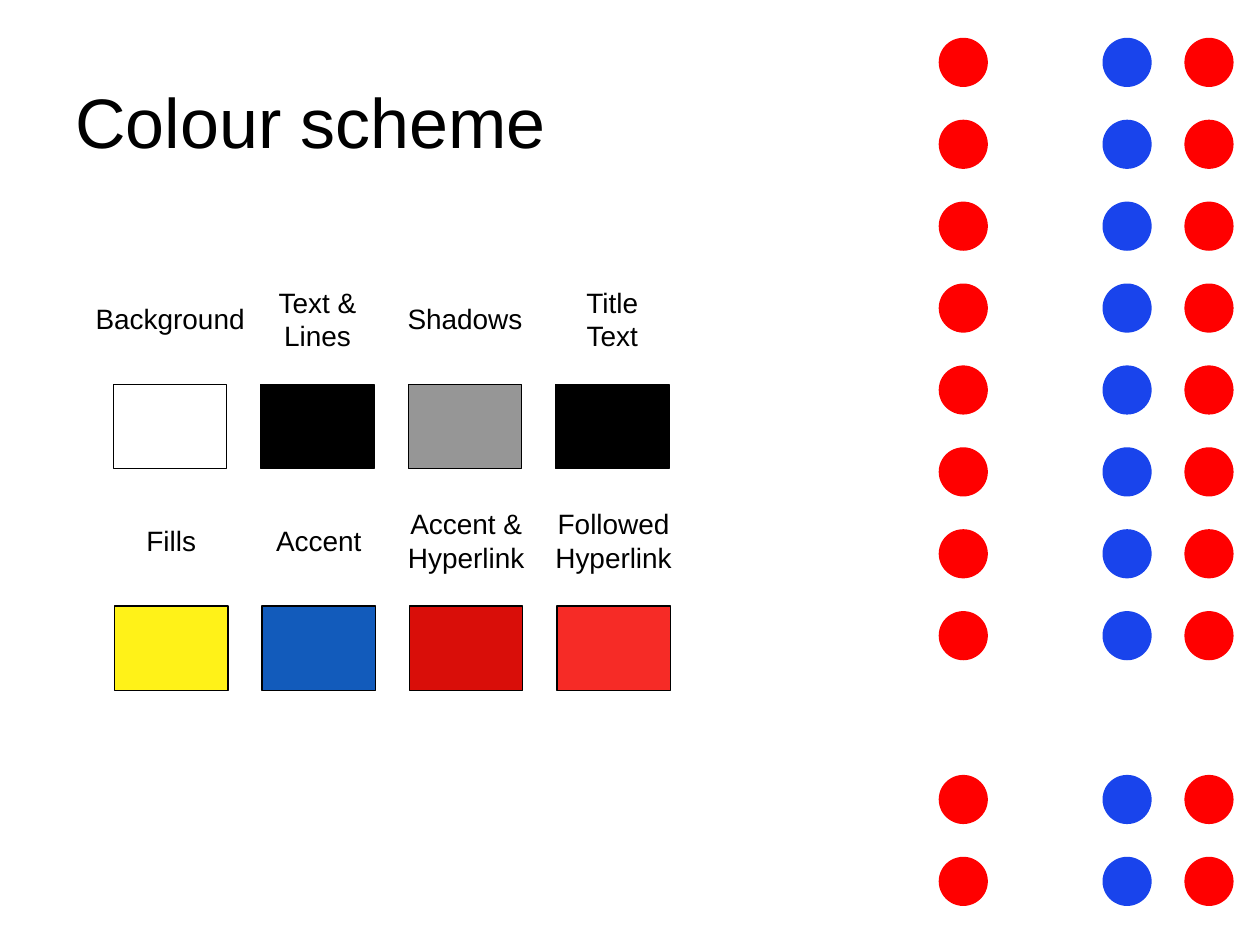
from dataclasses import dataclass

import pptx
import pptx.dml.color
import pptx.enum.shapes
import pptx.enum.text
import pptx.util

RGBColor = pptx.dml.color.RGBColor
Inches = pptx.util.Inches
Shape = pptx.enum.shapes.MSO_SHAPE
Align = pptx.enum.text.PP_ALIGN
AutoSize = pptx.enum.text.MSO_AUTO_SIZE

WHITE = RGBColor(0xFF, 0xFF, 0xFF)
BLACK = RGBColor(0x00, 0x00, 0x00)
GREY = RGBColor(0x96, 0x96, 0x96)
YELLOW = RGBColor(0xFF, 0xF2, 0x18)
BLUE = RGBColor(0x12, 0x5B, 0xBB)
DARK_RED = RGBColor(0xD9, 0x0E, 0x09)
LIGHT_RED = RGBColor(0xF6, 0x2B, 0x26)
DOT_RED = RGBColor(0xFF, 0x00, 0x00)
DOT_BLUE = RGBColor(0x19, 0x44, 0xEC)

# Dot grid: origin, pitch and diameter in inches
DOT_LEFT, DOT_TOP, DOT_PITCH, DOT_SIZE = 7.45, 0.3, 0.65, 0.39
DOT_COLUMNS = {0: DOT_RED, 2: DOT_BLUE, 3: DOT_RED}
DOT_ROWS = [row for row in range(11) if row != 8]

# Swatch grid: each row starts at its own left and top
SWATCH_ROWS = [(0.9, 3.05), (0.91, 4.81)]
SWATCH_PITCH, SWATCH_WIDTH, SWATCH_HEIGHT = 1.17, 0.9, 0.67
LABEL_RISE = 0.52  # from the swatch top up to the middle of its label
LINE_HEIGHT, LABEL_PADDING = 0.27, 0.1


@dataclass(frozen=True)
class Swatch:
    label: str
    label_width: float
    color: RGBColor
    column: int
    row: int


SWATCHES = [
    Swatch("Background", 1.39, WHITE, 0, 0),
    Swatch("Text &\nLines", 0.84, BLACK, 1, 0),
    Swatch("Shadows", 1.11, GREY, 2, 0),
    Swatch("Title\vText", 0.63, BLACK, 3, 0),
    Swatch("Fills", 0.6, YELLOW, 0, 1),
    Swatch("Accent", 0.88, BLUE, 1, 1),
    Swatch("Accent &\nHyperlink", 1.13, DARK_RED, 2, 1),
    Swatch("Followed\nHyperlink", 1.13, LIGHT_RED, 3, 1),
]


def add_filled(slide, kind, left: float, top: float, width: float,
               height: float, color: RGBColor, outlined: bool = False) -> None:
    shape = slide.shapes.add_shape(
        kind, Inches(left), Inches(top), Inches(width), Inches(height))
    shape.shadow.inherit = False
    shape.fill.solid()
    shape.fill.fore_color.rgb = color
    if outlined:
        shape.line.color.rgb = BLACK
        shape.line.width = pptx.util.Pt(0.75)
    else:
        shape.line.fill.background()


def add_text(slide, text: str, left: float, top: float, width: float,
             height: float, *, size: int, align=Align.LEFT,
             wrap: bool = True) -> None:
    box = slide.shapes.add_textbox(
        Inches(left), Inches(top), Inches(width), Inches(height))
    frame = box.text_frame
    frame.word_wrap = wrap
    frame.auto_size = AutoSize.NONE if wrap else AutoSize.SHAPE_TO_FIT_TEXT
    frame.vertical_anchor = pptx.enum.text.MSO_ANCHOR.MIDDLE
    frame.text = text
    for paragraph in frame.paragraphs:
        paragraph.alignment = align
        for run in paragraph.runs:
            run.font.size = pptx.util.Pt(size)
            run.font.name = "Arial"
            run.font.color.rgb = BLACK


def add_swatch(slide, swatch: Swatch) -> None:
    row_left, top = SWATCH_ROWS[swatch.row]
    left = row_left + swatch.column * SWATCH_PITCH
    add_filled(slide, Shape.RECTANGLE, left, top, SWATCH_WIDTH, SWATCH_HEIGHT,
               swatch.color, outlined=True)
    label_height = LABEL_PADDING + LINE_HEIGHT * len(swatch.label.splitlines())
    add_text(slide, swatch.label,
             left + (SWATCH_WIDTH - swatch.label_width) / 2,
             top - LABEL_RISE - label_height / 2,
             swatch.label_width, label_height,
             size=16, align=Align.CENTER, wrap=False)


def main() -> None:
    deck = pptx.Presentation()
    deck.slide_width, deck.slide_height = Inches(10), Inches(7.5)
    slide = deck.slides.add_slide(deck.slide_layouts[6])

    # Dot pattern along the right edge
    for row in DOT_ROWS:
        for column, color in DOT_COLUMNS.items():
            add_filled(slide, Shape.OVAL, DOT_LEFT + column * DOT_PITCH,
                       DOT_TOP + row * DOT_PITCH, DOT_SIZE, DOT_SIZE, color)

    # Title
    add_text(slide, "Colour scheme", 0.5, 0.29, 7.6, 1.34, size=40)

    # Labelled colour swatches
    for swatch in SWATCHES:
        add_swatch(slide, swatch)

    deck.save("out.pptx")


if __name__ == "__main__":
    main()
